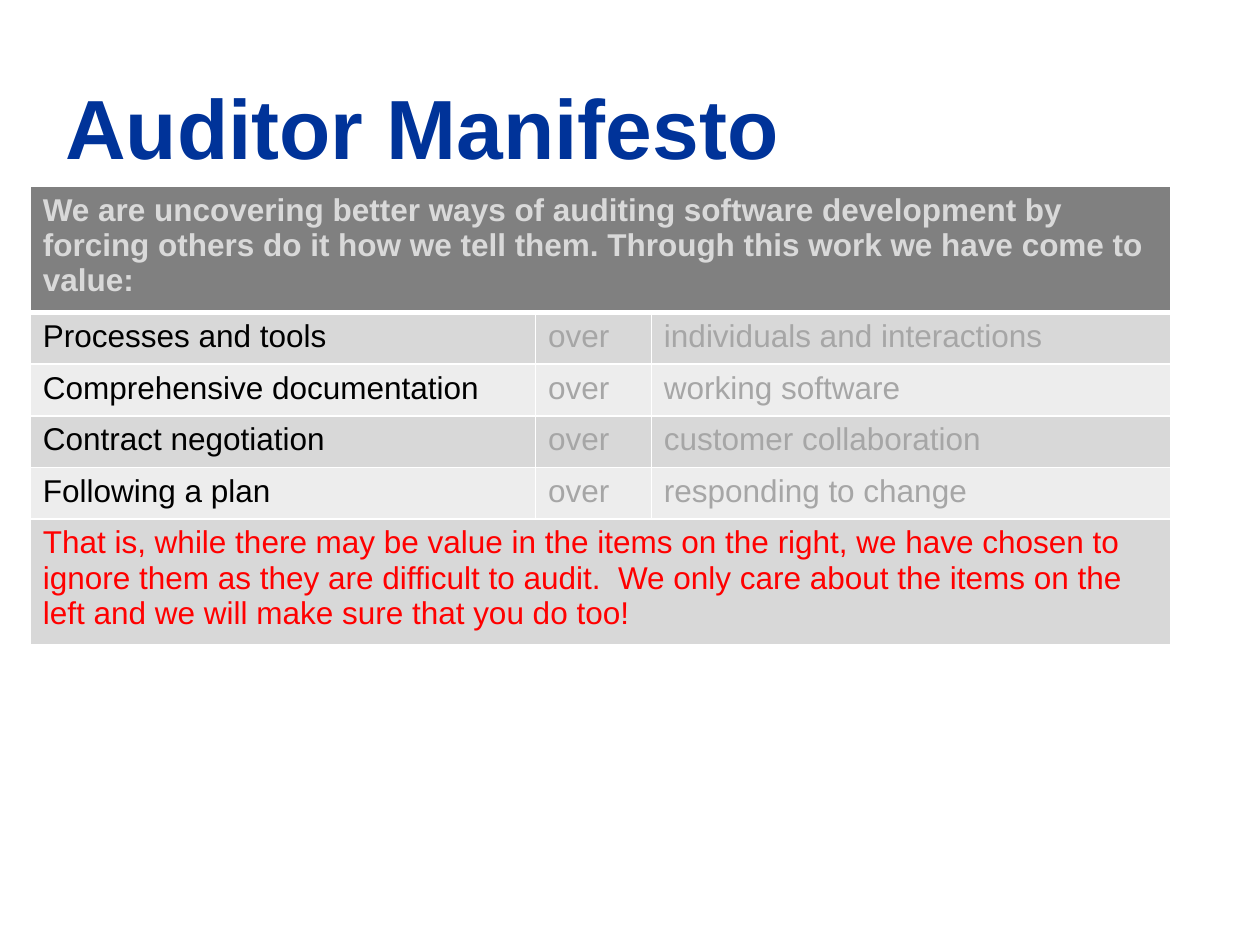
from typing import NamedTuple

import pptx
import pptx.dml.color
import pptx.enum.text
import pptx.oxml
import pptx.oxml.ns
import pptx.util

Inches = pptx.util.Inches

COLORS = {
    "title": "003399",
    "head": "808080",
    "pale": "D9D9D9",
    "dark": "D8D8D8",
    "light": "EDEDED",
    "black": "000000",
    "gray": "A6A6A6",
    "red": "FF0000",
    "white": "FFFFFF",
}


class Value(NamedTuple):
    left: str
    right: str


INTRO = (
    "We are uncovering better ways of auditing software development by forcing "
    "others do it how we tell them. Through this work we have come to value:"
)
VALUES = [
    Value("Processes and tools", "individuals and interactions"),
    Value("Comprehensive documentation", "working software"),
    Value("Contract negotiation", "customer collaboration"),
    Value("Following a plan", "responding to change"),
]
CLOSE = (
    "That is, while there may be value in the items on the right, we have chosen "
    "to ignore them as they are difficult to audit.  We only care about the items "
    "on the left and we will make sure that you do too!"
)
COLS = [4.01, 0.92, 4.12]
TALL, SHORT = 0.93, 0.41


def rgb(name: str) -> pptx.dml.color.RGBColor:
    return pptx.dml.color.RGBColor.from_string(COLORS[name])


def write(frame, text: str, *, color: str, size: float = 18, bold: bool = False) -> None:
    run = frame.paragraphs[0].add_run()
    run.text = text
    font = run.font
    font.name, font.size, font.bold = "Arial", pptx.util.Pt(size), bold
    font.color.rgb = rgb(color)


def edge(cell, top: float, base: float) -> None:
    """Draw white cell borders, with top and base widths in points."""
    props = cell._tc.get_or_add_tcPr()
    widths = {"L": 1, "R": 1, "T": top, "B": base}
    for spot, (side, width) in enumerate(widths.items()):
        line = pptx.oxml.parse_xml(
            f'<a:ln{side} {pptx.oxml.ns.nsdecls("a")} w="{pptx.util.Pt(width)}">'
            f'<a:solidFill><a:srgbClr val="{COLORS["white"]}"/></a:solidFill>'
            f"</a:ln{side}>"
        )
        props.insert(spot, line)


def add_title(slide) -> None:
    box = slide.shapes.add_textbox(Inches(0.42), Inches(0.21), Inches(8.23), Inches(1.24))
    frame = box.text_frame
    frame.word_wrap = True
    frame.vertical_anchor = pptx.enum.text.MSO_ANCHOR.BOTTOM
    write(frame, "Auditor Manifesto", color="title", size=48, bold=True)


def add_values(slide) -> None:
    heights = [TALL] + [SHORT] * len(VALUES) + [TALL]
    last = len(heights) - 1
    table = slide.shapes.add_table(
        len(heights), len(COLS), Inches(0.24), Inches(1.48),
        Inches(sum(COLS)), Inches(sum(heights)),
    ).table
    for col, width in zip(table.columns, COLS):
        col.width = Inches(width)

    for index, height in enumerate(heights):
        row = table.rows[index]
        row.height = Inches(height)
        shade = "head" if index == 0 else "dark" if index % 2 else "light"
        if index == last:
            shade = "dark"
        for cell in row.cells:
            cell.fill.solid()
            cell.fill.fore_color.rgb = rgb(shade)
            edge(cell, top=3 if index == 1 else 1, base=3 if index == 0 else 1)

    for index in (0, last):
        table.cell(index, 0).merge(table.cell(index, len(COLS) - 1))
    write(table.cell(0, 0).text_frame, INTRO, color="pale", bold=True)
    for index, value in enumerate(VALUES, 1):
        texts = (value.left, "over", value.right)
        for col, (text, color) in enumerate(zip(texts, ("black", "gray", "gray"))):
            write(table.cell(index, col).text_frame, text, color=color)
    write(table.cell(last, 0).text_frame, CLOSE, color="red")


def main() -> None:
    deck = pptx.Presentation()
    deck.slide_width, deck.slide_height = Inches(10), Inches(7.5)
    slide = deck.slides.add_slide(deck.slide_layouts[6])
    add_title(slide)
    add_values(slide)
    deck.save("out.pptx")


if __name__ == "__main__":
    main()
